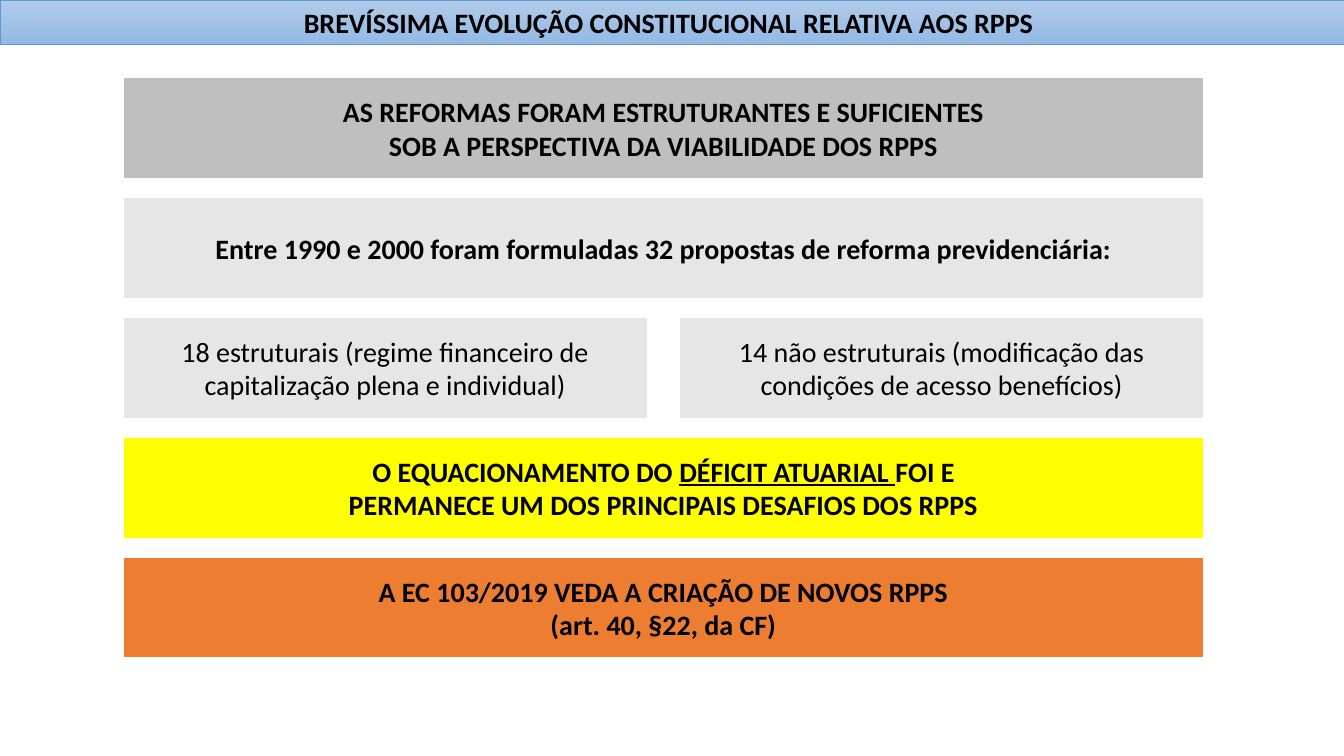
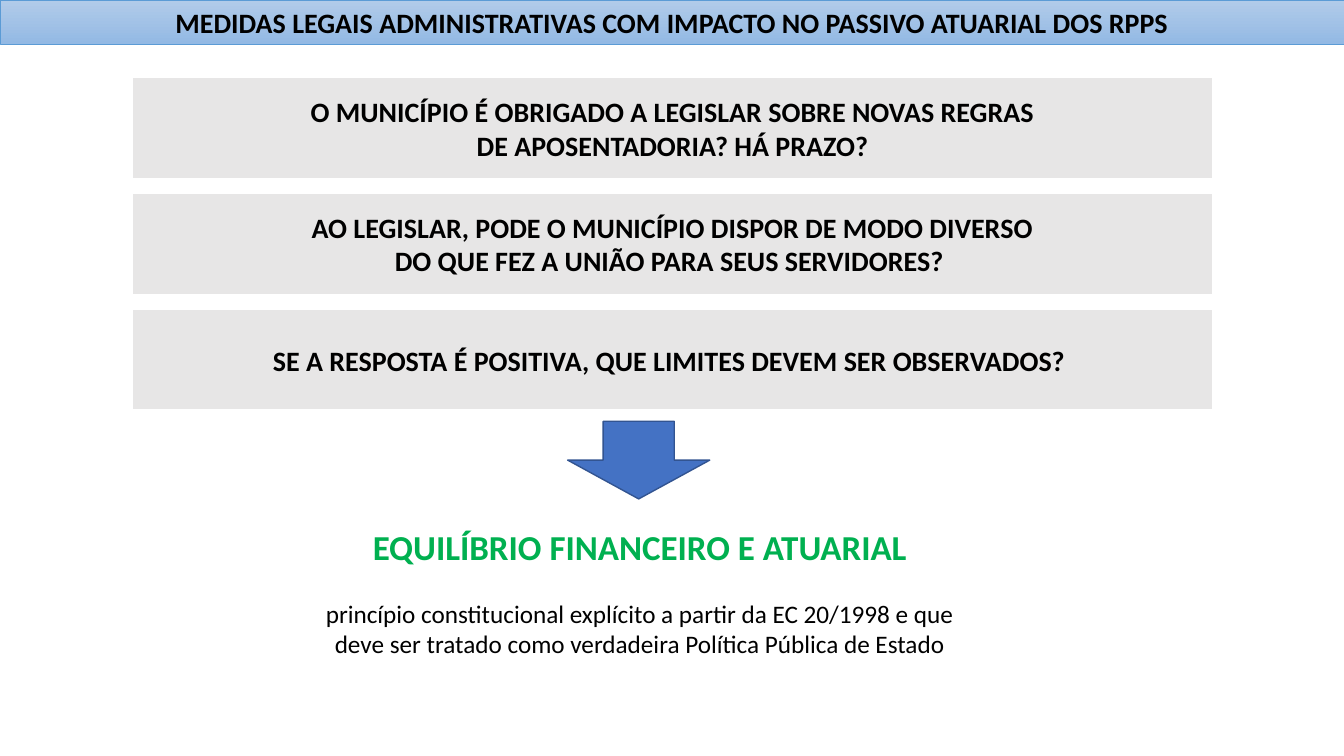
from dataclasses import dataclass

from pptx import Presentation
from pptx.dml.color import RGBColor
from pptx.enum.shapes import MSO_SHAPE
from pptx.enum.text import MSO_ANCHOR, MSO_AUTO_SIZE, PP_ALIGN
from pptx.util import Inches, Pt

RECTANGLE, DOWN_ARROW = MSO_SHAPE.RECTANGLE, MSO_SHAPE.DOWN_ARROW
CENTER = PP_ALIGN.CENTER
TOP, MIDDLE = MSO_ANCHOR.TOP, MSO_ANCHOR.MIDDLE
NO_AUTOFIT = MSO_AUTO_SIZE.NONE


@dataclass(frozen=True)
class Theme:
    font: str = "Calibri"
    title_size: int = 20
    band_size: int = 20
    principle_size: int = 25
    detail_size: int = 18
    black: RGBColor = RGBColor.from_string("000000")
    white: RGBColor = RGBColor.from_string("FFFFFF")
    title_light: RGBColor = RGBColor.from_string("B1CBE9")
    title_dark: RGBColor = RGBColor.from_string("93B9E4")
    title_line: RGBColor = RGBColor.from_string("5B9BD5")
    gray: RGBColor = RGBColor.from_string("BFBFBF")
    light_gray: RGBColor = RGBColor.from_string("E7E6E6")
    yellow: RGBColor = RGBColor.from_string("FFFF00")
    orange: RGBColor = RGBColor.from_string("ED7D31")
    arrow_blue: RGBColor = RGBColor.from_string("4472C4")
    arrow_line: RGBColor = RGBColor.from_string("325491")
    green: RGBColor = RGBColor.from_string("00B050")


THEME = Theme()
SLIDE_WIDTH, SLIDE_HEIGHT = 13.33, 7.5
TITLE_HEIGHT = 0.44
BAND_TOP, BAND_WIDTH, BAND_HEIGHT = 0.77, 10.72, 1
HALF_WIDTH = 5.2


def format_paragraph(paragraph, size, bold=True, color=THEME.black):
    paragraph.alignment = CENTER
    for run in paragraph.runs:
        run.font.name = THEME.font
        run.font.size = Pt(size)
        run.font.bold = bold
        run.font.color.rgb = color


def add_band(slide, left, top, text, fill, width=BAND_WIDTH, bold=True, underlined=""):
    """Add a filled band; the underlined part must lie in its first line."""
    band = slide.shapes.add_shape(
        RECTANGLE, Inches(left), Inches(top), Inches(width), Inches(BAND_HEIGHT))
    band.shadow.inherit = False
    band.fill.solid()
    band.fill.fore_color.rgb = fill
    band.line.color.rgb = THEME.white
    band.line.width = Pt(1)
    frame = band.text_frame
    frame.word_wrap = True
    frame.vertical_anchor = MIDDLE
    frame.text = text
    if underlined:
        first_line = frame.paragraphs[0]
        before, emphasis, after = first_line.text.partition(underlined)
        first_line.text = before
        for part in (emphasis, after):
            run = first_line.add_run()
            run.text = part
            run.font.underline = part == emphasis
    for paragraph in frame.paragraphs:
        format_paragraph(paragraph, THEME.band_size, bold)


deck = Presentation()
deck.slide_width, deck.slide_height = Inches(SLIDE_WIDTH), Inches(SLIDE_HEIGHT)
title_only = deck.slide_layouts[5]

# Title bars
slides = []
for heading in (
    "BREVÍSSIMA EVOLUÇÃO CONSTITUCIONAL RELATIVA AOS RPPS ",
    "MEDIDAS LEGAIS ADMINISTRATIVAS COM IMPACTO NO PASSIVO ATUARIAL DOS RPPS",
):
    slide = deck.slides.add_slide(title_only)
    title = slide.shapes.title
    title.left, title.top = Inches(0), Inches(0)
    title.width, title.height = Inches(SLIDE_WIDTH), Inches(TITLE_HEIGHT)
    title.fill.gradient()
    title.fill.gradient_angle = 270
    for stop, color in zip(title.fill.gradient_stops, (THEME.title_light, THEME.title_dark)):
        stop.color.rgb = color
    title.line.color.rgb = THEME.title_line
    title.line.width = Pt(0.5)
    title.text_frame.text = heading
    title.text_frame.auto_size = NO_AUTOFIT
    title.text_frame.vertical_anchor = TOP
    format_paragraph(title.text_frame.paragraphs[0], THEME.title_size)
    slides.append(slide)
evolution, measures = slides

# Constitutional evolution
evolution_left, evolution_step = 1.22, 1.19
for row, text, fill, underlined in (
    (0, "AS REFORMAS FORAM ESTRUTURANTES E SUFICIENTES\n"
        "SOB A PERSPECTIVA DA VIABILIDADE DOS RPPS", THEME.gray, ""),
    (1, "Entre 1990 e 2000 foram formuladas 32 propostas de reforma previdenciária:",
     THEME.light_gray, ""),
    (3, "O EQUACIONAMENTO DO DÉFICIT ATUARIAL FOI E\n"
        "PERMANECE UM DOS PRINCIPAIS DESAFIOS DOS RPPS", THEME.yellow, "DÉFICIT ATUARIAL "),
    (4, "A EC 103/2019 VEDA A CRIAÇÃO DE NOVOS RPPS\n(art. 40, §22, da CF)",
     THEME.orange, ""),
):
    add_band(evolution, evolution_left, BAND_TOP + row * evolution_step, text, fill,
             underlined=underlined)

proposals_top = BAND_TOP + 2 * evolution_step
for left, text in (
    (evolution_left, "18 estruturais (regime financeiro de capitalização plena e individual)"),
    (evolution_left + BAND_WIDTH - HALF_WIDTH,
     "14 não estruturais (modificação das condições de acesso benefícios)"),
):
    add_band(evolution, left, proposals_top, text, THEME.light_gray, HALF_WIDTH, bold=False)

# Legal and administrative measures
measures_left, measures_step = 1.31, 1.15
for row, question in enumerate((
    "O MUNICÍPIO É OBRIGADO A LEGISLAR SOBRE NOVAS REGRAS\nDE APOSENTADORIA? HÁ PRAZO?",
    "AO LEGISLAR, PODE O MUNICÍPIO DISPOR DE MODO DIVERSO\n"
    "DO QUE FEZ A UNIÃO PARA SEUS SERVIDORES? ",
    "SE A RESPOSTA É POSITIVA, QUE LIMITES DEVEM SER OBSERVADOS? ",
)):
    add_band(measures, measures_left, BAND_TOP + row * measures_step, question,
             THEME.light_gray)

arrow = measures.shapes.add_shape(
    DOWN_ARROW, Inches(5.63), Inches(4.18), Inches(1.41), Inches(0.77))
arrow.shadow.inherit = False
arrow.fill.solid()
arrow.fill.fore_color.rgb = THEME.arrow_blue
arrow.line.color.rgb = THEME.arrow_line
arrow.line.width = Pt(1)

conclusion = measures.shapes.add_textbox(
    Inches(3.01), Inches(5.16), Inches(6.67), Inches(1.73)).text_frame
conclusion.word_wrap = True
conclusion.text = (
    "EQUILÍBRIO FINANCEIRO E ATUARIAL\n"
    "princípio constitucional explícito a partir da EC 20/1998 e que deve ser tratado "
    "como verdadeira Política Pública de Estado")
principle, detail = conclusion.paragraphs
format_paragraph(principle, THEME.principle_size, color=THEME.green)
format_paragraph(detail, THEME.detail_size, bold=False)
detail.space_before = Pt(22)

deck.save("out.pptx")
